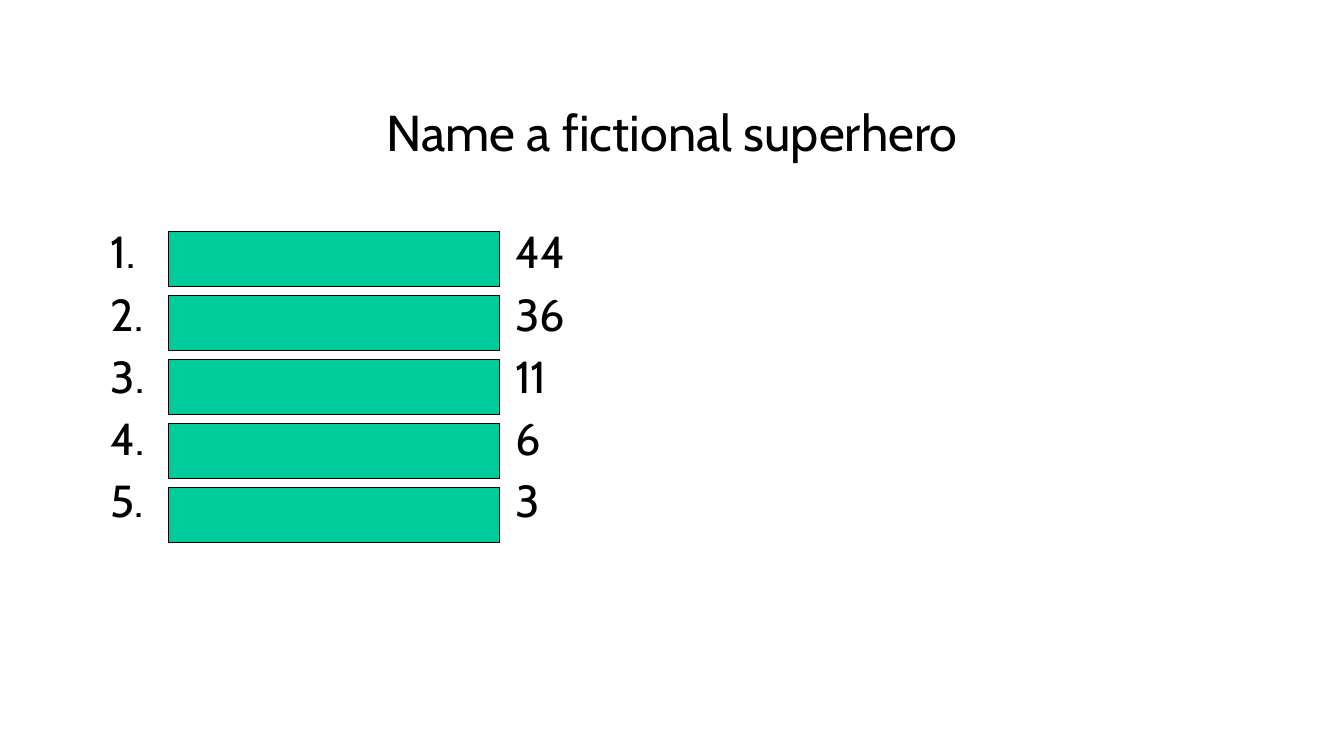
from dataclasses import dataclass
from lxml.etree import SubElement
from pptx import Presentation
from pptx.dml.color import RGBColor
from pptx.enum.shapes import MSO_SHAPE
from pptx.enum.text import MSO_ANCHOR, PP_ALIGN
from pptx.oxml.ns import qn
from pptx.util import Inches, Pt


@dataclass(frozen=True)
class Theme:
    font: str = "Cabin"
    ink: RGBColor = RGBColor(0, 0, 0)
    bar: RGBColor = RGBColor(0x00, 0xCC, 0x99)
    title: int = 36
    body: int = 32
    gap: int = 6
    line: float = 0.75


THEME = Theme()
WIDTH, HEIGHT = 13.33, 7.5
SCORES = [44, 36, 11, 6, 3]
INDENT, STOP = 0.67, 4.01


def style(par, size):
    par.font.name = THEME.font
    par.font.size = Pt(size)
    par.font.color.rgb = THEME.ink


def add_text(slide, box):
    frame = slide.shapes.add_textbox(*map(Inches, box)).text_frame
    frame.word_wrap = True
    return frame


def add_title(slide, box, text):
    frame = add_text(slide, box)
    frame.vertical_anchor = MSO_ANCHOR.MIDDLE
    par = frame.paragraphs[0]
    par.text = text
    par.alignment = PP_ALIGN.CENTER
    style(par, THEME.title)


def number(par):
    """Give the paragraph a hanging number and a tab stop for its score."""
    props = par._p.get_or_add_pPr()
    props.set("marL", str(Inches(INDENT)))
    props.set("indent", str(-Inches(INDENT)))
    SubElement(props, qn("a:buFont"), typeface=THEME.font)
    SubElement(props, qn("a:buAutoNum"), type="arabicPeriod")
    tabs = SubElement(props, qn("a:tabLst"))
    SubElement(tabs, qn("a:tab"), pos=str(Inches(STOP)), algn="l")


def add_scores(slide, box, scores):
    frame = add_text(slide, box)
    for row, score in enumerate(scores):
        par = frame.add_paragraph() if row else frame.paragraphs[0]
        par.text = f"\t{score}"
        par.space_before = Pt(THEME.gap)
        number(par)
        style(par, THEME.body)


def add_bars(slide, box, count):
    """Cover the answers with equal bars, one to a row of the box."""
    left, top, width, height = box
    pitch = height / count
    for row in range(count):
        place = left, top + row * pitch, width, 0.86 * pitch
        bar = slide.shapes.add_shape(MSO_SHAPE.RECTANGLE, *map(Inches, place))
        bar.shadow.inherit = False
        bar.fill.solid()
        bar.fill.fore_color.rgb = THEME.bar
        bar.line.color.rgb = THEME.ink
        bar.line.width = Pt(THEME.line)


def add_board(slide, box, title, scores):
    left, top, width, height = box
    add_title(slide, (left, top, width, 0.21 * height), title)
    add_scores(slide, (left, top + height / 4, width, 0.75 * height), scores)
    bars = left + INDENT, top + 0.27 * height, 0.29 * width, 0.53 * height
    add_bars(slide, bars, len(scores))


def main():
    deck = Presentation()
    deck.slide_width, deck.slide_height = Inches(WIDTH), Inches(HEIGHT)
    slide = deck.slides.add_slide(deck.slide_layouts[6])
    board = 0.075 * WIDTH, 0.09 * HEIGHT, 0.85 * WIDTH, 0.8 * HEIGHT
    add_board(slide, board, "Name a fictional superhero", SCORES)
    deck.save("out.pptx")


if __name__ == "__main__":
    main()
